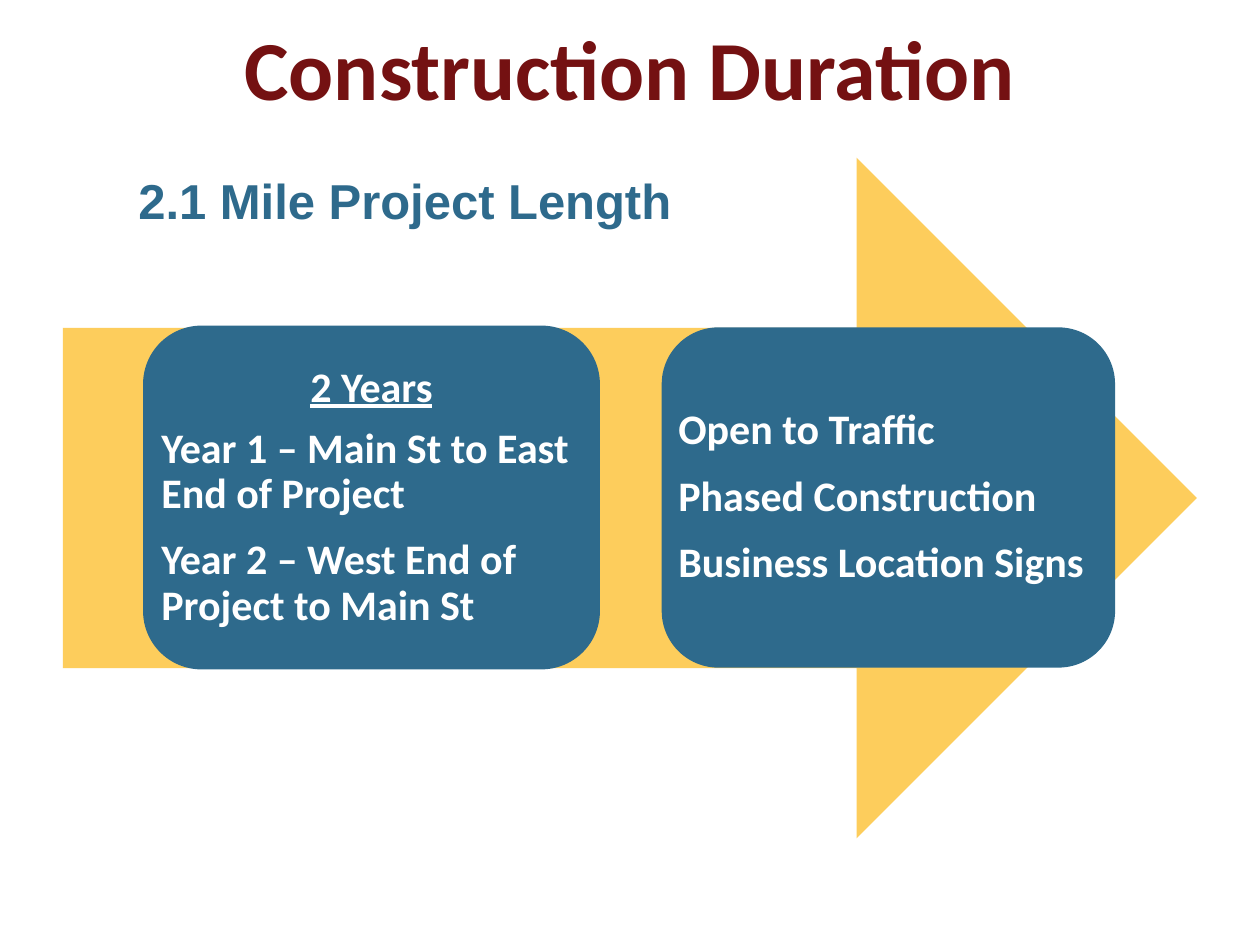
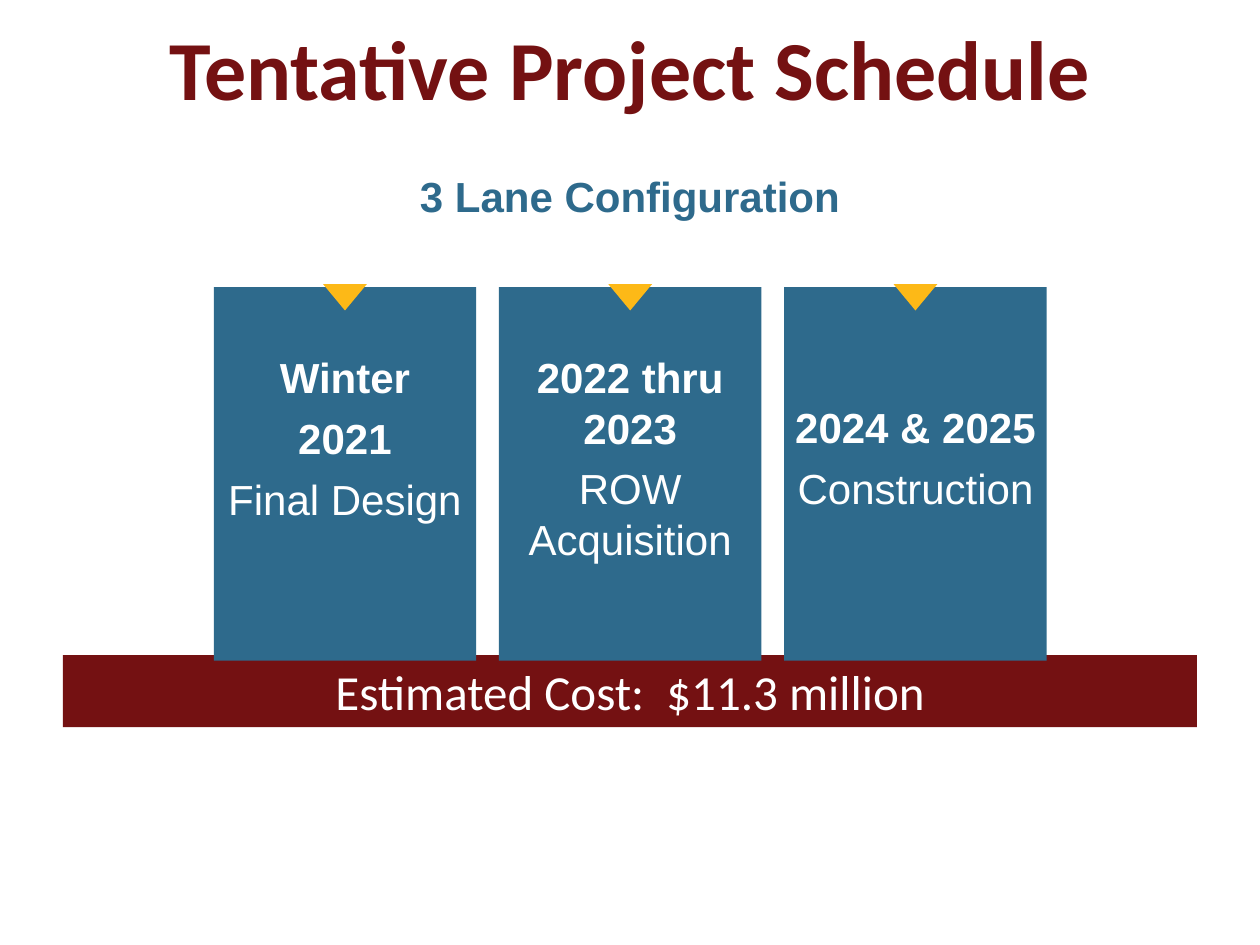
import pptx
import lxml.etree
from dataclasses import dataclass
from pptx.dml.color import RGBColor
from pptx.enum.shapes import MSO_SHAPE
from pptx.enum.text import MSO_ANCHOR, PP_ALIGN
from pptx.oxml.ns import qn
from pptx.util import Cm, Pt

MAROON = "741112"
BLUE = "2E6A8C"
GOLD = "FDB917"
WHITE = "FFFFFF"


@dataclass
class Line:
    text: str
    size: int = 24
    font: str = "Calibri"
    color: str = WHITE
    bold: bool = True
    underline: bool = False
    align: PP_ALIGN = PP_ALIGN.CENTER
    spacing: float = 1.0
    after: int = 0


def color(hex_string):
    return RGBColor.from_string(hex_string)


def write(shape, lines, anchor=MSO_ANCHOR.TOP, margins=(0.25, 0.13, 0.25, 0.13), wrap=True):
    frame = shape.text_frame
    frame.word_wrap = wrap
    frame.vertical_anchor = anchor
    frame.margin_left, frame.margin_top, frame.margin_right, frame.margin_bottom = map(Cm, margins)
    for index, line in enumerate(lines):
        paragraph = frame.add_paragraph() if index else frame.paragraphs[0]
        paragraph.text = line.text
        paragraph.alignment = line.align
        paragraph.line_spacing = line.spacing
        paragraph.space_after = Pt(line.after)
        font = paragraph.font
        font.name, font.size = line.font, Pt(line.size)
        font.bold, font.underline = line.bold, line.underline
        font.color.rgb = color(line.color)


def add_text(slide, left, top, width, height, line, **options):
    box = slide.shapes.add_textbox(Cm(left), Cm(top), Cm(width), Cm(height))
    write(box, [line], **options)


def add_block(slide, kind, left, top, width, height, fill, opacity=100):
    shape = slide.shapes.add_shape(kind, Cm(left), Cm(top), Cm(width), Cm(height))
    shape.shadow.inherit = False
    shape.fill.solid()
    shape.fill.fore_color.rgb = color(fill)
    shape.line.fill.background()
    if opacity < 100:
        fill_color = shape._element.spPr.find(qn("a:solidFill"))[0]
        lxml.etree.SubElement(fill_color, qn("a:alpha"), val=str(opacity * 1000))
    return shape


def add_title(slide, text):
    add_text(slide, 0, 0.08, 25.4, 2.54, Line(text, 48, color=MAROON), anchor=MSO_ANCHOR.MIDDLE)


def add_card(slide, left, lines, outlined=False):
    card = add_block(slide, MSO_SHAPE.ROUNDED_RECTANGLE, left, 6.6, 9.14, 6.86, BLUE)
    if outlined:
        card.line.color.rgb = color(BLUE)
        card.line.width = Pt(2)
    write(card, lines, MSO_ANCHOR.MIDDLE, (0, 0, 0, 0))


def card_line(text, after=12):
    return Line(text, align=PP_ALIGN.LEFT, spacing=0.9, after=after)


def add_phase(slide, left, text_inset, dates, activity):
    width, marker_width = 5.29, 0.88
    panel = add_block(slide, MSO_SHAPE.RECTANGLE, left, 5.79, width, 7.53, BLUE)
    lines = [Line(text, font="Arial", after=after) for text, after in dates]
    lines.append(Line(activity, font="Arial", bold=False))
    write(panel, lines, margins=(0, text_inset, 0, 0))
    add_block(slide, MSO_SHAPE.FLOWCHART_MERGE, left + (width - marker_width) / 2, 5.73,
              marker_width, 0.53, GOLD)


def build_duration(slide):
    add_block(slide, MSO_SHAPE.RIGHT_ARROW, 1.27, 3.18, 22.86, 13.72, GOLD, opacity=70)
    add_card(slide, 2.92, [
        Line("2 Years", underline=True, spacing=0.9, after=9),
        card_line("Year 1 – Main St to East End of Project"),
        card_line("Year 2 – West End of Project to Main St", 9),
    ], outlined=True)
    add_card(slide, 13.34, [
        card_line("Open to Traffic"),
        card_line("Phased Construction"),
        card_line("Business Location Signs", 9),
    ])
    add_title(slide, "Construction Duration")
    add_text(slide, 2.54, 3.3, 12.7, 1.45,
             Line("2.1 Mile Project Length", 28, "Arial", BLUE, align=PP_ALIGN.LEFT))


def build_schedule(slide):
    cost_bar = add_block(slide, MSO_SHAPE.RECTANGLE, 1.27, 13.21, 22.86, 1.45, MAROON)
    write(cost_bar, [Line("Estimated Cost:  $11.3 million", 28, bold=False, after=12)])
    add_title(slide, "Tentative Project Schedule")
    phases = [
        (1.3, [("Winter", 6), ("2021", 6)], "Final Design"),
        (1.3, [("2022 thru", 0), ("2023", 6)], "ROW Acquisition"),
        (2.3, [("2024 & 2025", 6)], "Construction"),
    ]
    for index, phase in enumerate(phases):
        add_phase(slide, 4.31 + index * 5.75, *phase)
    add_text(slide, 8.18, 3.3, 9.04, 1.28, Line("3 Lane Configuration", 24, "Arial", BLUE),
             anchor=MSO_ANCHOR.MIDDLE, wrap=False)


def main():
    presentation = pptx.Presentation()
    presentation.slide_width, presentation.slide_height = Cm(25.4), Cm(19.05)
    for build in (build_duration, build_schedule):
        build(presentation.slides.add_slide(presentation.slide_layouts[6]))
    presentation.save("out.pptx")


if __name__ == "__main__":
    main()
